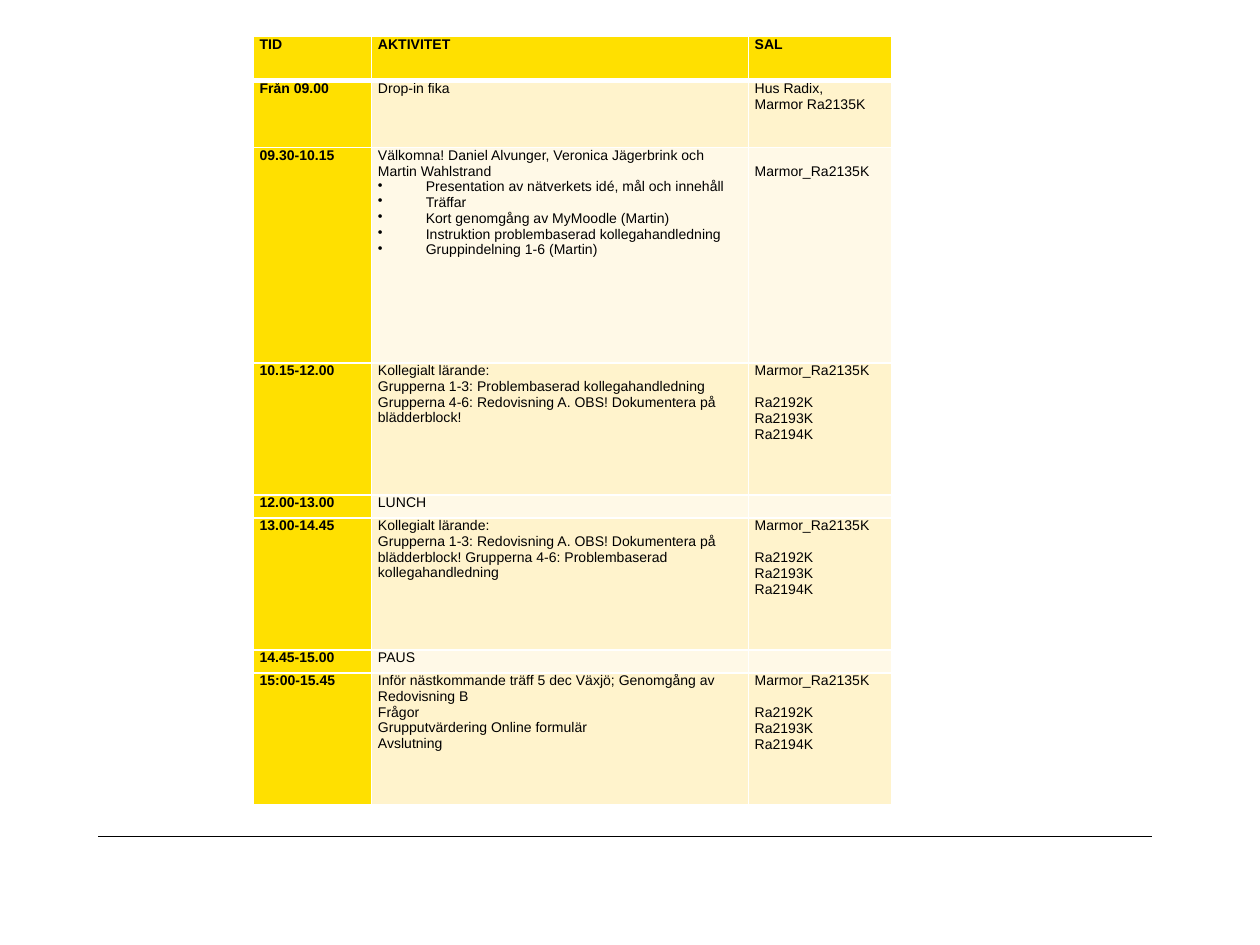
from lxml.etree import SubElement
from pptx import Presentation
from pptx.dml.color import RGBColor
from pptx.enum.shapes import MSO_CONNECTOR
from pptx.oxml.ns import qn
from pptx.util import Inches, Pt

COLORS = {
    "gold": "FFE000",
    "sand": "FFF3CC",
    "cream": "FFF9E7",
    "white": "FFFFFF",
    "black": "000000",
}
COLS = [0.94, 2.99, 1.14]
ROWS = [0.35, 0.53, 1.71, 1.05, 0.18, 1.05, 0.18, 1.05]
GAP = 9.2
ROOMS = ["Marmor_Ra2135K", "", "Ra2192K", "Ra2193K", "Ra2194K"]
PLAN = [
    ("TID", ["AKTIVITET"], ["SAL"]),
    ("Från 09.00", ["Drop-in fika"], ["Hus Radix,", "Marmor Ra2135K"]),
    ("09.30-10.15", [
        "Välkomna! Daniel Alvunger, Veronica Jägerbrink och Martin Wahlstrand",
        "• Presentation av nätverkets idé, mål och innehåll",
        "• Träffar",
        "• Kort genomgång av MyMoodle (Martin)",
        "• Instruktion problembaserad kollegahandledning",
        "• Gruppindelning 1-6 (Martin)",
    ], ["", "Marmor_Ra2135K"]),
    ("10.15-12.00", [
        "Kollegialt lärande:",
        "Grupperna 1-3: Problembaserad kollegahandledning",
        "Grupperna 4-6: Redovisning A. OBS! Dokumentera på blädderblock!",
    ], ROOMS),
    ("12.00-13.00", ["LUNCH"], []),
    ("13.00-14.45", [
        "Kollegialt lärande:",
        "Grupperna 1-3: Redovisning A. OBS! Dokumentera på blädderblock! "
        "Grupperna 4-6: Problembaserad kollegahandledning",
    ], ROOMS),
    ("14.45-15.00", ["PAUS"], []),
    ("15:00-15.45", [
        "Inför nästkommande träff 5 dec Växjö; Genomgång av Redovisning B",
        "Frågor",
        "Grupputvärdering Online formulär",
        "Avslutning",
    ], ROOMS),
]


def paint(name):
    return RGBColor.from_string(COLORS[name])


def write(para, text, size=8, bold=False, color="black", before=0):
    if text.startswith("• "):
        props = para._p.get_or_add_pPr()
        props.set("marL", str(Inches(0.38)))
        props.set("indent", str(-Inches(0.38)))
        SubElement(props, qn("a:buChar"), char="•")
        text = text[2:]
    if before:
        para.space_before = Pt(before)
    run = para.add_run()
    run.text = text
    run.font.name = "Arial"
    run.font.size = Pt(size)
    run.font.bold = bold
    run.font.color.rgb = paint(color)


def fill_text(cell, lines, bold):
    frame = cell.text_frame
    if not lines:
        SubElement(frame.paragraphs[0]._p, qn("a:endParaRPr"), sz="800")
        return
    para, before = frame.paragraphs[0], 0
    for num, line in enumerate(lines):
        if not line:
            before = GAP
            continue
        if before and num == 1:
            cell.margin_top = Pt(before)
            before = 0
        elif num:
            para = frame.add_paragraph()
        write(para, line, bold=bold, before=before)
        before = 0


def add_edges(cell, top, base):
    props = cell._tc.get_or_add_tcPr()
    for side, width in (("L", 1), ("R", 1), ("T", top), ("B", base)):
        edge = SubElement(props, qn(f"a:ln{side}"), w=str(Pt(width)))
        solid = SubElement(edge, qn("a:solidFill"))
        SubElement(solid, qn("a:srgbClr"), val=COLORS["white"])


def add_plan(slide, left, top, width, height):
    shape = slide.shapes.add_table(
        len(ROWS), len(COLS),
        Inches(left), Inches(top), Inches(width), Inches(height))
    table = shape.table
    for col, size in zip(table.columns, COLS):
        col.width = Inches(size)
    for row, size in zip(table.rows, ROWS):
        row.height = Inches(size)
    for r, (time, tasks, rooms) in enumerate(PLAN):
        band = "sand" if r % 2 else "cream"
        for c, lines in enumerate(([time], tasks, rooms)):
            cell = table.cell(r, c)
            head = r == 0 or c == 0
            cell.margin_left = cell.margin_right = Inches(0.05)
            cell.margin_top = cell.margin_bottom = 0
            add_edges(cell, 3 if r == 1 else 1, 3 if r == 0 else 1)
            cell.fill.solid()
            cell.fill.fore_color.rgb = paint("gold" if head else band)
            fill_text(cell, lines, head)


def add_rule(slide, left, top, width):
    rule = slide.shapes.add_connector(
        MSO_CONNECTOR.STRAIGHT, Inches(left), Inches(top),
        Inches(left + width), Inches(top))
    rule.line.color.rgb = paint("black")
    rule.line.width = Pt(0.5)
    SubElement(rule._element.spPr, qn("a:effectLst"))


def main():
    deck = Presentation()
    deck.slide_width, deck.slide_height = Inches(10), Inches(7.5)
    slide = deck.slides.add_slide(deck.slide_layouts[6])
    add_rule(slide, 0.78, 6.64, 8.36)
    add_plan(slide, 2.01, 0.29, sum(COLS), sum(ROWS))
    deck.save("out.pptx")


if __name__ == "__main__":
    main()
